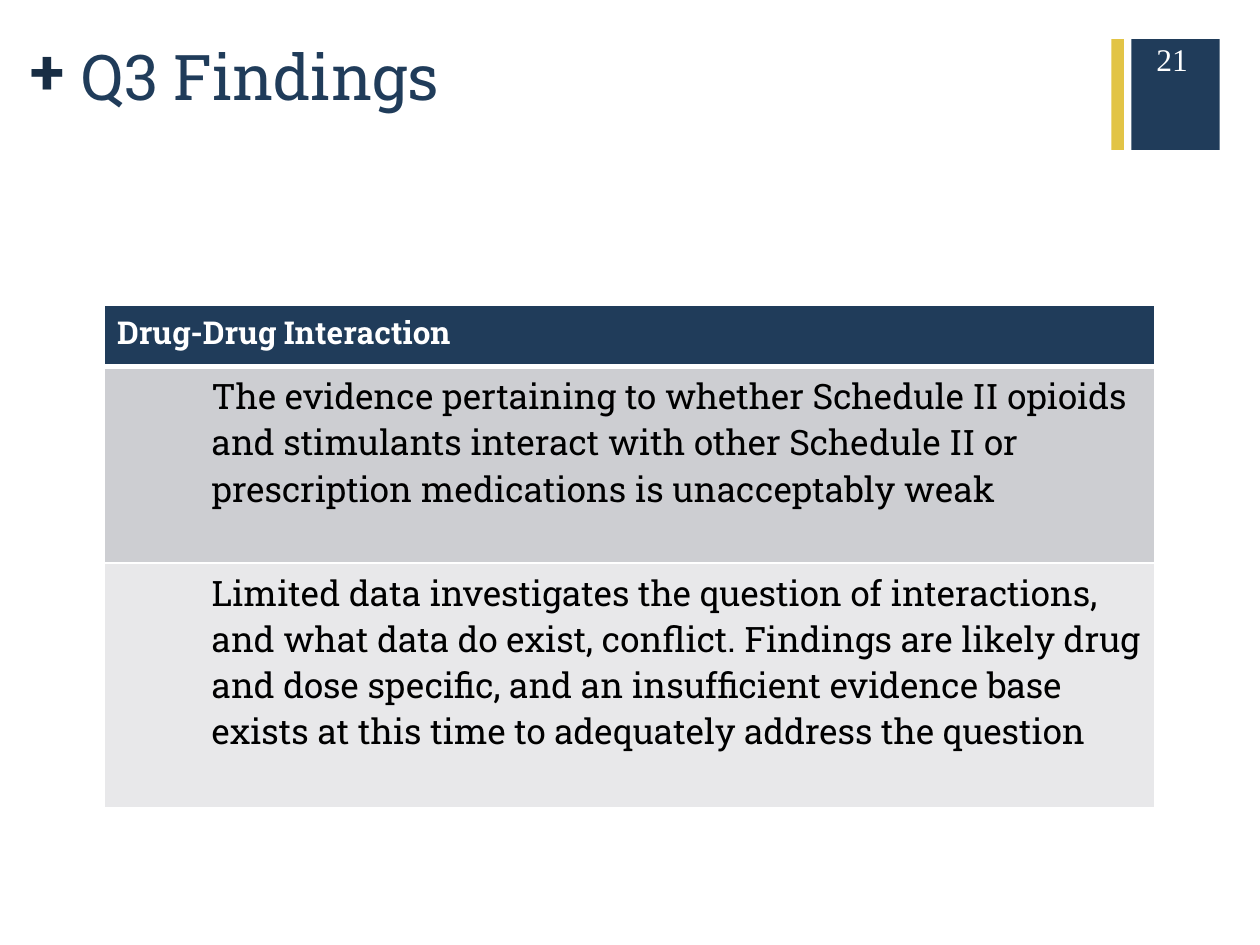
from pptx import Presentation
from pptx.dml.color import RGBColor
from pptx.enum.shapes import MSO_SHAPE
from pptx.enum.text import MSO_ANCHOR, PP_ALIGN
from pptx.oxml.ns import qn
from pptx.util import Inches, Pt
from lxml.etree import SubElement

TITLE = "Q3 Findings"
HEADER = "Drug-Drug Interaction"
FINDINGS = [
    ("The evidence pertaining to whether Schedule II opioids and stimulants interact "
     "with other Schedule II or prescription medications is unacceptably weak", "band1"),
    ("Limited data investigates the question of interactions, and what data do exist, "
     "conflict. Findings are likely drug and dose specific, and an insufficient evidence "
     "base exists at this time to adequately address the question", "band2"),
]
COL_WIDTHS = [0.75, 7.58]
ROW_HEIGHTS = [0.49, 1.56, 1.94]
COLORS = {"navy": "203C5A", "plus": "182D44", "gold": "E2C446", "white": "FFFFFF",
          "black": "000000", "band1": "CDCED2", "band2": "E8E8EA"}
FONT = "Roboto Slab"


def color(name):
    return RGBColor.from_string(COLORS[name])


def add_text(tf, text, size, fill, font=FONT, bold=False):
    p = tf.paragraphs[0]
    p.alignment = PP_ALIGN.LEFT
    r = p.add_run()
    r.text = text
    r.font.name = font
    r.font.size = Pt(size)
    r.font.bold = bold
    r.font.color.rgb = color(fill)


def add_bar(s, left, width, fill):
    sp = s.shapes.add_shape(MSO_SHAPE.RECTANGLE, Inches(left), Inches(0.31),
                            Inches(width), Inches(0.88))
    sp.shadow.inherit = False
    sp.fill.solid()
    sp.fill.fore_color.rgb = color(fill)
    sp.line.fill.background()


def add_box(s, left, top, width, height):
    tf = s.shapes.add_textbox(Inches(left), Inches(top), Inches(width), Inches(height)).text_frame
    tf.word_wrap = True
    return tf


def style_cell(cell, fill, top, bottom):
    tcPr = cell._tc.get_or_add_tcPr()
    for tag, width in (("lnL", 0), ("lnR", 0), ("lnT", top), ("lnB", bottom)):
        ln = SubElement(tcPr, qn(f"a:{tag}"), w=str(Pt(width)))
        if width:
            line_fill = SubElement(ln, qn("a:solidFill"))
            SubElement(line_fill, qn("a:srgbClr"), val=COLORS["white"])
        else:
            SubElement(ln, qn("a:noFill"))
    cell.fill.solid()
    cell.fill.fore_color.rgb = color(fill)


prs = Presentation()
prs.slide_width, prs.slide_height = Inches(10), Inches(7.5)
s = prs.slides.add_slide(prs.slide_layouts[5])

add_bar(s, 8.98, 0.7, "navy")
add_bar(s, 8.82, 0.1, "gold")

tf = add_box(s, 0.24, 0.25, 0.28, 0.61)
tf.margin_left = tf.margin_right = tf.margin_top = tf.margin_bottom = 0
add_text(tf, "+", 36, "plus", bold=True)

title = s.shapes.title
title.left, title.top, title.width, title.height = map(Inches, (0.55, 0.27, 8.26, 0.65))
title.text_frame.vertical_anchor = MSO_ANCHOR.MIDDLE
add_text(title.text_frame, TITLE, 36, "navy")

add_text(add_box(s, 9.08, 0.27, 0.61, 0.4), "21", 18, "white", "Times New Roman")

table = s.shapes.add_table(len(ROW_HEIGHTS), len(COL_WIDTHS), Inches(0.83), Inches(2.42),
                           Inches(sum(COL_WIDTHS)), Inches(sum(ROW_HEIGHTS))).table
for col, width in zip(table.columns, COL_WIDTHS):
    col.width = Inches(width)
for row, height in zip(table.rows, ROW_HEIGHTS):
    row.height = Inches(height)

table.cell(0, 0).merge(table.cell(0, 1))
for cell in table.rows[0].cells:
    style_cell(cell, "navy", 1, 3)
add_text(table.cell(0, 0).text_frame, HEADER, 18, "white", bold=True)

for i, (text, band) in enumerate(FINDINGS, start=1):
    for cell in table.rows[i].cells:
        style_cell(cell, band, 3 if i == 1 else 1, 1)
    add_text(table.cell(i, 1).text_frame, text, 20, "black")

prs.save("out.pptx")
